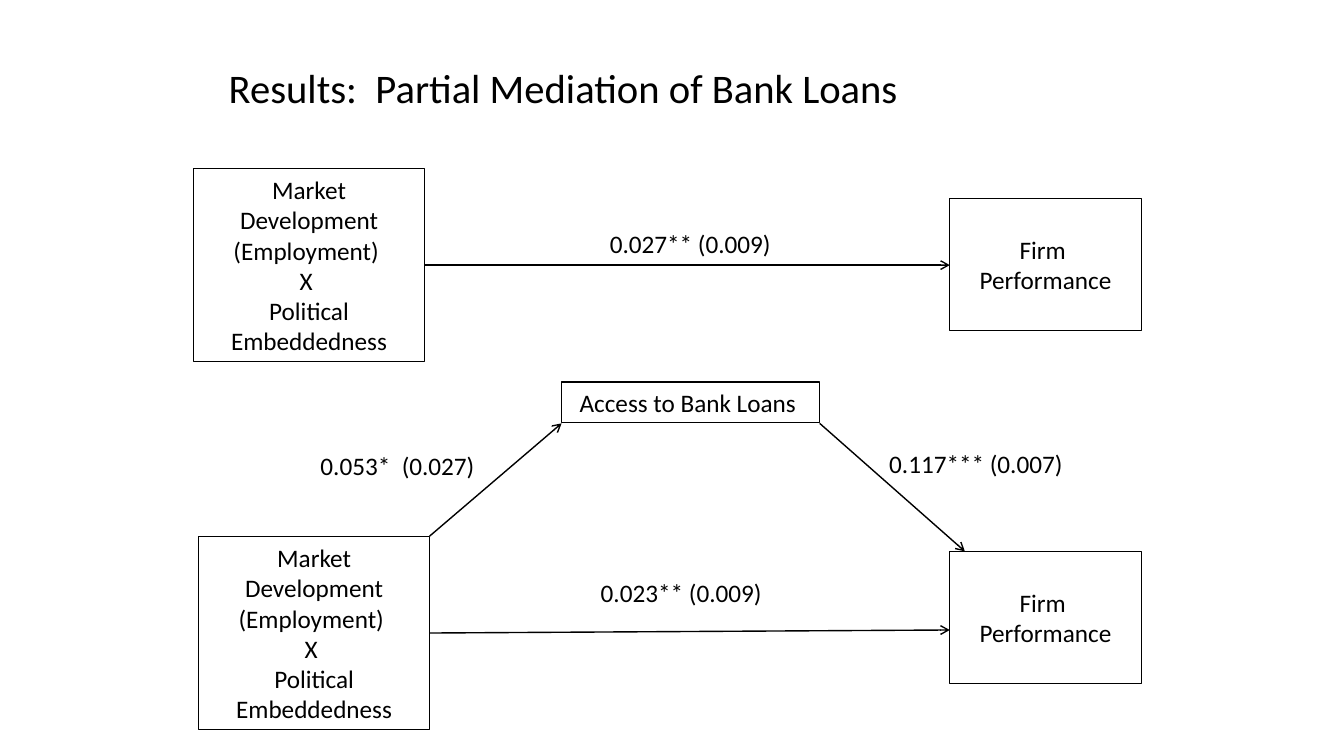
from dataclasses import dataclass

from lxml import etree
from pptx import Presentation
from pptx.dml.color import RGBColor
from pptx.enum.shapes import MSO_CONNECTOR, MSO_SHAPE
from pptx.enum.text import MSO_ANCHOR, PP_ALIGN
from pptx.oxml.ns import qn
from pptx.util import Emu, Pt

RECTANGLE = MSO_SHAPE.RECTANGLE
STRAIGHT = MSO_CONNECTOR.STRAIGHT
MIDDLE = MSO_ANCHOR.MIDDLE
TOP = MSO_ANCHOR.TOP
LEFT = PP_ALIGN.LEFT
CENTER = PP_ALIGN.CENTER

EMU_PER_PX = 9144
SLIDE_WIDTH, SLIDE_HEIGHT = 1333, 750
BLANK_LAYOUT = 6


def px(length):
    return Emu(length * EMU_PER_PX)


@dataclass(frozen=True)
class Theme:
    ink: RGBColor = RGBColor(0, 0, 0)
    font: str = "Calibri"
    title_size: int = 29
    body_size: int = 18
    box_line: float = 0.75
    arrow_line: float = 1


class MediationSlide:
    """Draws the boxes, arrows and labels of a path diagram."""

    def __init__(self, page, theme):
        self.page = page
        self.theme = theme

    def set_text(self, shape, text, size, align, anchor, wrap=True):
        frame = shape.text_frame
        frame.text = text
        frame.word_wrap = wrap
        frame.vertical_anchor = anchor
        for para in frame.paragraphs:
            para.alignment = align
            for span in para.runs:
                span.font.name = self.theme.font
                span.font.size = Pt(size)
                span.font.color.rgb = self.theme.ink

    def text_box(self, left, top, width, height):
        return self.page.shapes.add_textbox(px(left), px(top), px(width), px(height))

    def title(self, text, left, top, width, height):
        box = self.text_box(left, top, width, height)
        self.set_text(box, text, self.theme.title_size, LEFT, MIDDLE)
        box.text_frame.paragraphs[0].line_spacing = 0.9

    def label(self, text, left, top, width, height=40):
        box = self.text_box(left, top, width, height)
        self.set_text(box, text, self.theme.body_size, LEFT, TOP, wrap=False)

    def variable(self, text, left, top, width, height):
        box = self.page.shapes.add_shape(
            RECTANGLE, px(left), px(top), px(width), px(height))
        box.shadow.inherit = False
        box.fill.background()
        box.line.color.rgb = self.theme.ink
        box.line.width = Pt(self.theme.box_line)
        self.set_text(box, text, self.theme.body_size, CENTER, MIDDLE)

    def arrow(self, start, end):
        arrow = self.page.shapes.add_connector(
            STRAIGHT, *(px(length) for length in (*start, *end)))
        arrow.line.color.rgb = self.theme.ink
        arrow.line.width = Pt(self.theme.arrow_line)
        properties = arrow.element.spPr
        etree.SubElement(properties.get_or_add_ln(), qn("a:tailEnd"), type="arrow")
        etree.SubElement(properties, qn("a:effectLst"))


def main():
    deck = Presentation()
    deck.slide_width, deck.slide_height = px(SLIDE_WIDTH), px(SLIDE_HEIGHT)
    page = deck.slides.add_slide(deck.slide_layouts[BLANK_LAYOUT])
    diagram = MediationSlide(page, Theme())

    diagram.title("Results:  Partial Mediation of Bank Loans", 217, 54, 882, 71)

    predictor = "Market Development (Employment) \nX \nPolitical Embeddedness"
    for left, top in ((192, 167), (197, 532)):
        diagram.variable(predictor, left, top, 229, 192)
    for top in (197, 547):
        diagram.variable("Firm \nPerformance", 942, top, 190, 131)
    diagram.variable("Access to Bank Loans ", 557, 379, 256, 40)

    paths = (
        ("0.027** (0.009)", (595, 222, 193), (421, 263), (942, 263)),
        ("0.023** (0.009)", (586, 568, 193), (426, 628), (942, 625)),
        ("0.053*  (0.027)", (308, 442, 186), (426, 532), (557, 420)),
        ("0.117*** (0.007)", (872, 440, 205), (813, 420), (957, 547)),
    )
    for estimate, place, start, end in paths:
        diagram.arrow(start, end)
        diagram.label(estimate, *place)

    deck.save("out.pptx")


if __name__ == "__main__":
    main()
